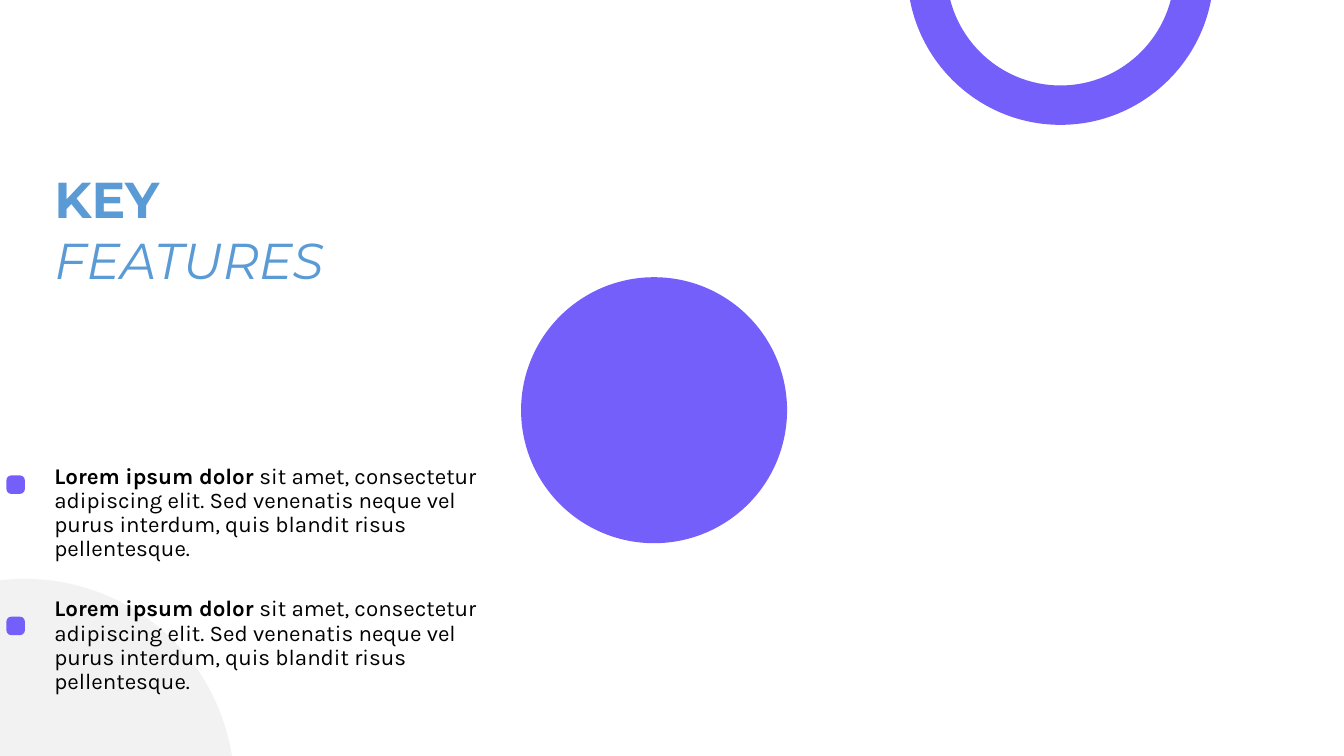
import lxml.etree
import pptx
import pptx.dml.color
import pptx.enum.shapes
import pptx.enum.text
import pptx.oxml.ns
import pptx.util

Pt = pptx.util.Pt
qn = pptx.oxml.ns.qn
SHAPE = pptx.enum.shapes.MSO_SHAPE
COLORS = {"violet": "755FFB", "pale": "F2F2F2", "title": "5B9BD5", "body": "000000"}


def paint(shape, color):
    shape.shadow.inherit = False
    shape.fill.solid()
    shape.fill.fore_color.rgb = pptx.dml.color.RGBColor.from_string(COLORS[color])
    shape.line.fill.background()


def add_text(left, top, width, height, paragraphs, font_name, size, color):
    frame = slide.shapes.add_textbox(Pt(left), Pt(top), Pt(width), Pt(height)).text_frame
    frame.word_wrap = True
    for index, runs in enumerate(paragraphs):
        paragraph = frame.paragraphs[0] if index == 0 else frame.add_paragraph()
        paragraph.font.name = font_name
        paragraph.font.size = Pt(size)
        paragraph.font.color.rgb = pptx.dml.color.RGBColor.from_string(COLORS[color])
        for text, bold, italic in runs:
            run = paragraph.add_run()
            run.text = text
            run.font.bold = bold
            run.font.italic = italic
    return frame


deck = pptx.Presentation()
deck.slide_width, deck.slide_height = Pt(960), Pt(540)
slide = deck.slides.add_slide(deck.slide_layouts[6])

backdrop = slide.shapes.add_shape(SHAPE.OVAL, Pt(-132), Pt(413.5), Pt(299.5), Pt(299.5))
paint(backdrop, "pale")

marker_tops = [339.6, 440.5]
for marker_top in marker_tops:
    marker = slide.shapes.add_shape(SHAPE.ROUNDED_RECTANGLE, Pt(4.6), Pt(marker_top), Pt(13.2), Pt(13.2))
    marker.adjustments[0] = 0.26
    paint(marker, "violet")

title_frame = add_text(31.8, 116.6, 506, 94.3,
                       [[("KEY", True, False)], [("FEATURES", False, True)]],
                       "Montserrat", 36, "title")
title_frame.auto_size = pptx.enum.text.MSO_AUTO_SIZE.SHAPE_TO_FIT_TEXT

feature = [
    ("Lorem ipsum dolor ", True, False),
    ("sit amet, consectetur adipiscing elit. Sed venenatis neque vel "
     "purus interdum, quis blandit risus pellentesque.", False, False),
]
for feature_top in [328.6, 423.3]:
    feature_frame = add_text(31.8, feature_top, 327, 55.4, [feature], "Karla", 16, "body")
    feature_frame.paragraphs[0].line_spacing = 0.9
    feature_frame.paragraphs[0].space_before = Pt(10)

center_x, center_y = 757.5, -20.2
outer, inner = 109.4, 81.3
bend = 0.55
half_circle = [(-1, 0), (-1, bend), (-bend, 1), (0, 1), (bend, 1), (1, bend), (1, 0)]
rim = [(x * outer, y * outer) for x, y in half_circle]
rim += [(x * inner, y * inner) for x, y in reversed(half_circle)]
outline = [(Pt(center_x + x), Pt(center_y + y)) for x, y in rim]
builder = slide.shapes.build_freeform(*outline[0], scale=1.0)
builder.add_line_segments(outline[1:], close=True)
half_ring = builder.convert_to_shape()
segments = list(half_ring._element.iter(qn("a:lnTo")))
for first in (0, 3, 7, 10):
    curve = lxml.etree.Element(qn("a:cubicBezTo"))
    segments[first].addprevious(curve)
    for segment in segments[first:first + 3]:
        curve.append(segment[0])
        segment.getparent().remove(segment)
paint(half_ring, "violet")

disc = slide.shapes.add_shape(SHAPE.OVAL, Pt(372.2), Pt(198), Pt(190), Pt(190))
paint(disc, "violet")

deck.save("out.pptx")
